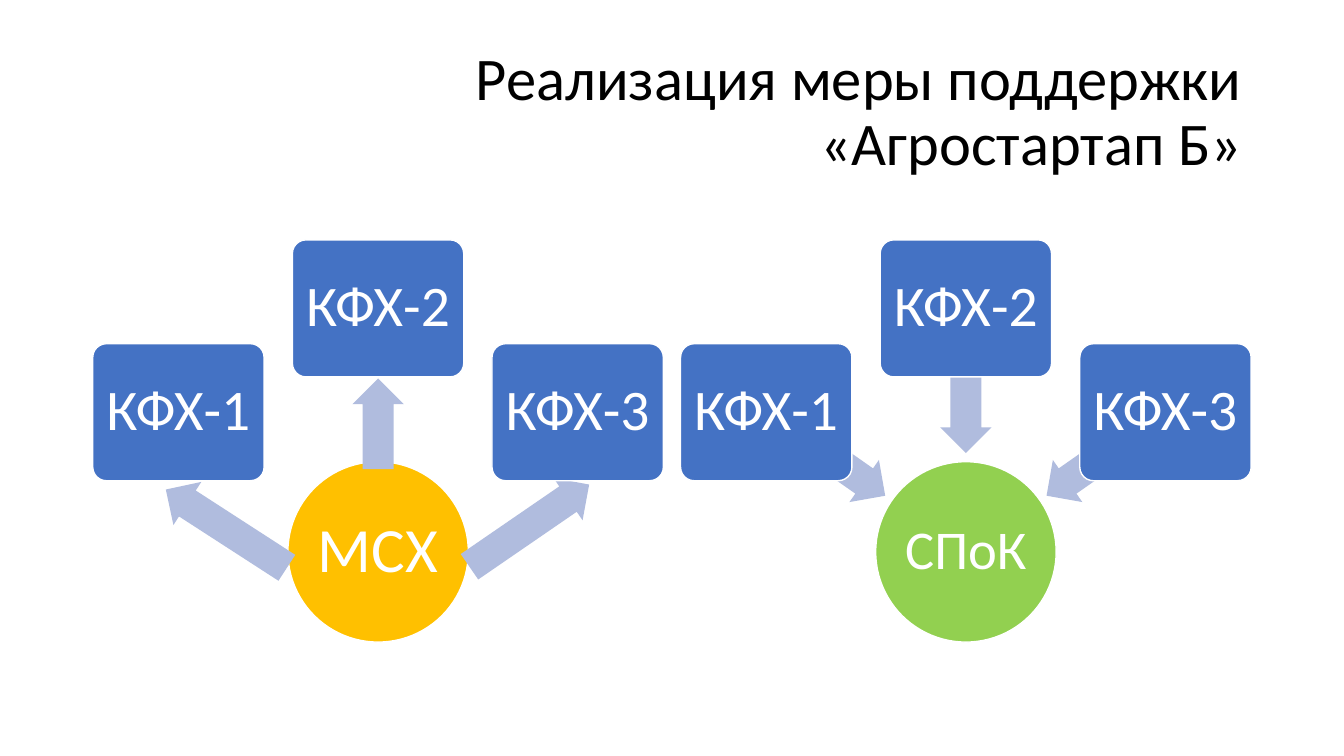
from pptx import Presentation
from pptx.dml.color import RGBColor
from pptx.enum.shapes import MSO_SHAPE as Shape
from pptx.enum.text import MSO_ANCHOR as Anchor, MSO_AUTO_SIZE as Fit, PP_ALIGN as Align
from pptx.util import Inches, Pt

WHITE, BLUE, PALE = "FFFFFF", "4472C4", "B0BCDE"
STEP = 1.98  # distance between neighbouring farm boxes
FARM_TOPS = (3.41, 2.38, 3.41)


def paint(target, color):
    """Set a solid colour on a fill."""
    target.solid()
    target.fore_color.rgb = RGBColor.from_string(color)


def write(shape, text, size, color=WHITE, align=Align.CENTER, inset=0.03):
    frame = shape.text_frame
    frame.word_wrap = True
    frame.auto_size = Fit.NONE
    frame.vertical_anchor = Anchor.MIDDLE
    frame.margin_left = frame.margin_right = Inches(inset)
    frame.margin_top = frame.margin_bottom = Inches(inset)
    para = frame.paragraphs[0]
    para.alignment = align
    para.line_spacing = 0.9
    run = para.add_run()
    run.text = text
    run.font.name = "Calibri"
    run.font.size = Pt(size)
    paint(run.font.fill, color)


def place(shape, left, top, width, height):
    shape.left, shape.top = Inches(left), Inches(top)
    shape.width, shape.height = Inches(width), Inches(height)


def add_form(group, kind, box, fill, edge=True):
    shape = group.shapes.add_shape(kind, *(Inches(n) for n in box))
    shape.shadow.inherit = False
    paint(shape.fill, fill)
    if edge:
        paint(shape.line.fill, WHITE)
        shape.line.width = Pt(1)
    else:
        shape.line.fill.background()
    return shape


def add_arrow(group, left, top, width, turn):
    arrow = add_form(group, Shape.LEFT_ARROW, (left, top, width, 0.51), PALE, edge=False)
    arrow.adjustments[0], arrow.adjustments[1] = 0.6, 0.5
    arrow.rotation = turn


def add_farm(group, left, top, text):
    farm = add_form(group, Shape.ROUNDED_RECTANGLE, (left, top, 1.7, 1.36), BLUE)
    farm.adjustments[0] = 0.1
    write(farm, text, 41, inset=0.09)


def add_scheme(slide, left, hub, size, color, arrows):
    """Draw a round hub with three farms; arrows are (left, top, width, turn)."""
    group = slide.shapes.add_group_shape()
    circle = add_form(group, Shape.OVAL, (left + 1.935, 4.58, 1.79, 1.79), color)
    write(circle, hub, size)
    for i, (top, arrow) in enumerate(zip(FARM_TOPS, arrows)):
        add_arrow(group, *arrow)
        add_farm(group, left + i * STEP, top, f"КФХ-{i + 1}")


def main():
    deck = Presentation()
    deck.slide_width, deck.slide_height = Inches(13.33), Inches(7.5)
    slide = deck.slides.add_slide(deck.slide_layouts[5])
    title = slide.shapes.title
    place(title, 2.96, 0.4, 9.46, 1.45)
    write(title, "Реализация меры поддержки «Агростартап Б»", 43.2,
          color="000000", align=Align.RIGHT, inset=0.1)
    add_scheme(slide, 0.92, "МСХ", 45, "FFC000", [
        (1.53, 4.99, 1.43, 32.9),
        (3.3, 3.95, 0.9, 90),
        (4.53, 4.96, 1.44, 145.5),
    ])
    add_scheme(slide, 6.75, "СПоК", 39, "92D050", [
        (7.47, 4.25, 1.44, 215),
        (8.86, 3.52, 1.44, 270),
        (10.25, 4.25, 1.44, 325),
    ])
    deck.save("out.pptx")


if __name__ == "__main__":
    main()
